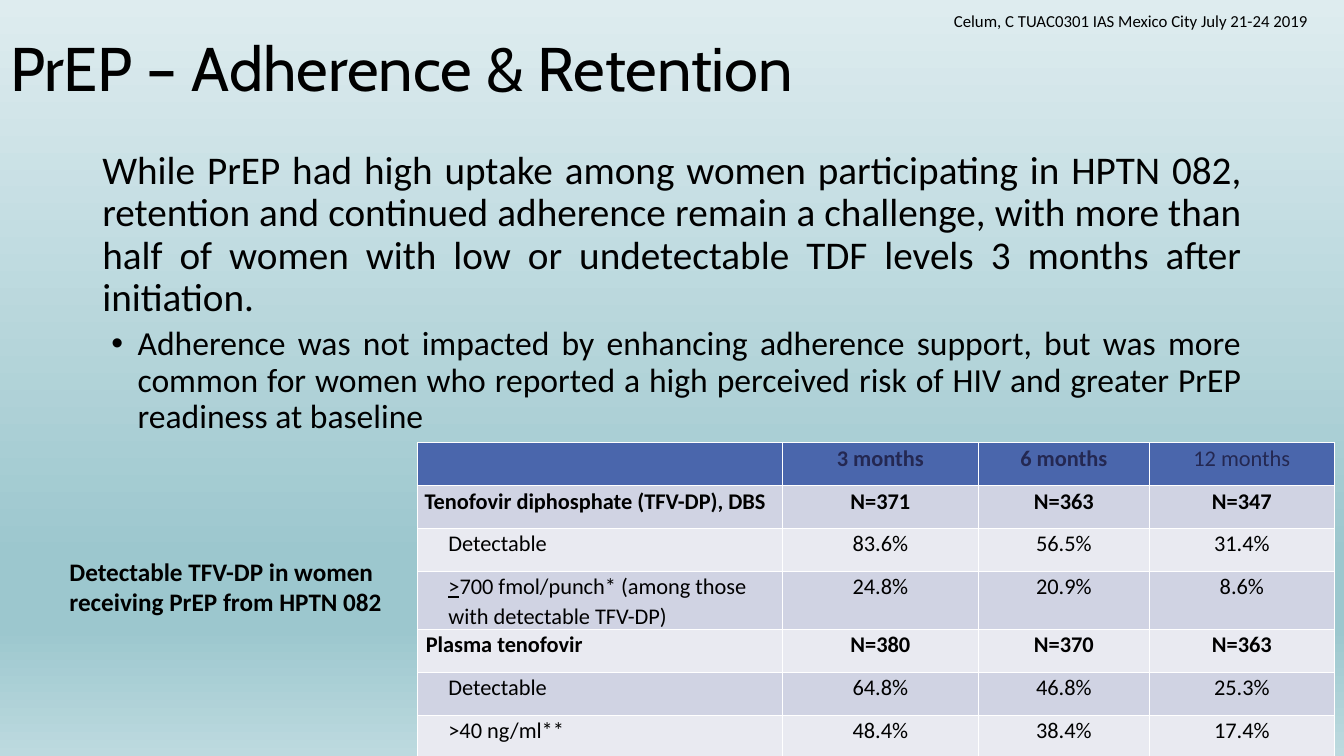
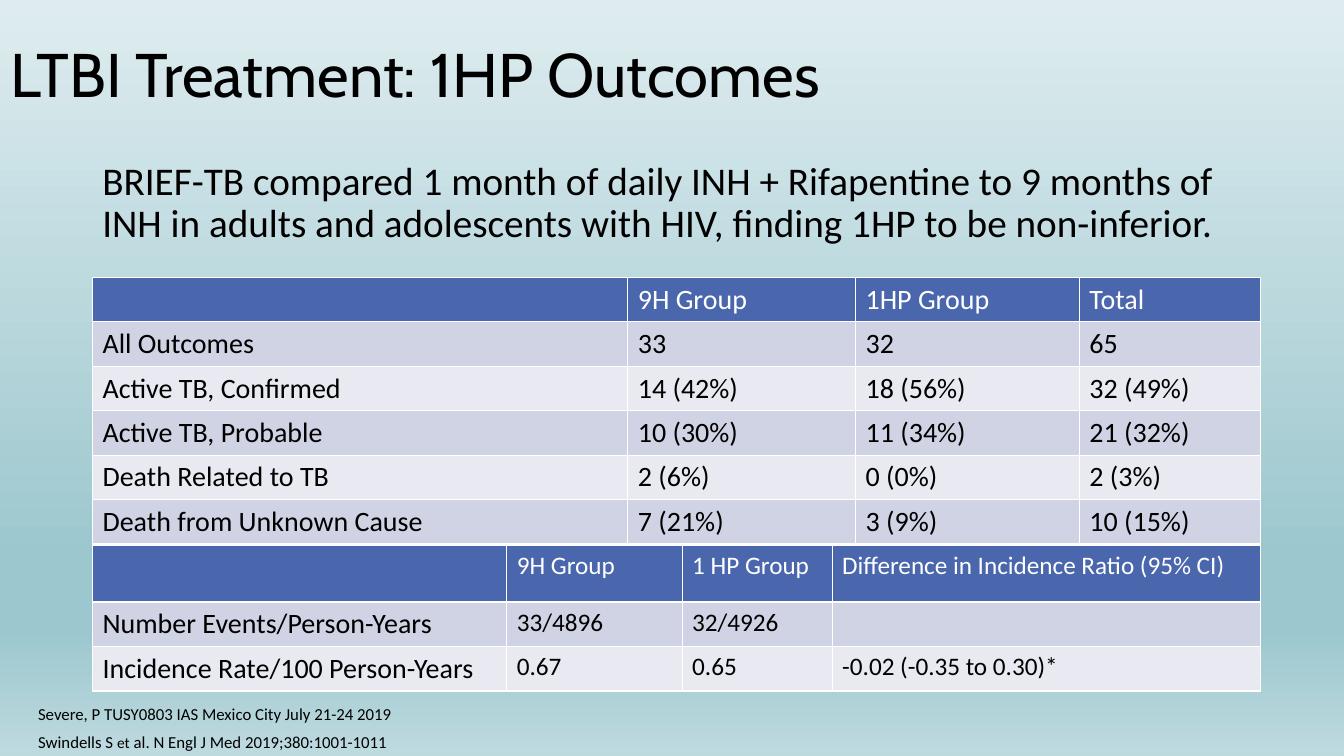
import lxml.etree
import pptx
import pptx.dml.color
import pptx.enum.text
import pptx.oxml
import pptx.oxml.ns
import pptx.util

Cm = pptx.util.Cm
Pt = pptx.util.Pt
qn = pptx.oxml.ns.qn
ALIGN = pptx.enum.text.PP_ALIGN
ANCHOR = pptx.enum.text.MSO_ANCHOR

HUES = {
    "black": "000000",
    "white": "FFFFFF",
    "navy": "242852",
    "pale": "ACCBF9",
    "head": "4A66AC",
    "dark": "D0D3E3",
    "light": "E9EAF1",
}
SKY = [(0, "DEECEF"), (74, "9CC7CE"), (83, "9CC7CE"), (100, "BDDADF")]

DOSES = [
    ["", "3 months", "6 months", "12 months"],
    ["Tenofovir diphosphate (TFV-DP), DBS", "N=371", "N=363", "N=347"],
    ["Detectable", "83.6%", "56.5%", "31.4%"],
    [(">", "700 fmol/punch* (among those with detectable TFV-DP)"), "24.8%", "20.9%", "8.6%"],
    ["Plasma tenofovir", "N=380", "N=370", "N=363"],
    ["Detectable", "64.8%", "46.8%", "25.3%"],
    [">40 ng/ml**", "48.4%", "38.4%", "17.4%"],
]
CASES = [
    ["", "9H Group", "1HP Group", "Total"],
    ["All Outcomes", "33", "32", "65"],
    ["Active TB, Confirmed", "14 (42%)", "18 (56%)", "32 (49%)"],
    ["Active TB, Probable", "10 (30%)", "11 (34%)", "21 (32%)"],
    ["Death Related to TB", "2 (6%)", "0 (0%)", "2 (3%)"],
    ["Death from Unknown Cause", "7 (21%)", "3 (9%)", "10 (15%)"],
]
RATES = [
    ["", "9H Group", "1 HP Group", "Difference in Incidence Ratio (95% CI)"],
    ["Number Events/Person-Years", "33/4896", "32/4926", ""],
    ["Incidence Rate/100 Person-Years", "0.67", "0.65", "-0.02 (-0.35 to 0.30)*"],
]


def rgb(hue):
    return pptx.dml.color.RGBColor.from_string(HUES[hue])


def put(par, text, size, hue="black", bold=False, face="Calibri"):
    parts = (text,) if isinstance(text, str) else text
    par.text = parts[0]
    for part in parts[1:]:
        par.add_run().text = part
    for run in par.runs:
        run.font.name = face
        run.font.size = Pt(size)
        run.font.bold = bold
        run.font.color.rgb = rgb(hue)
    return par


def indent(par, left, first=0):
    props = par._p.get_or_add_pPr()
    props.set("marL", str(Cm(left)))
    props.set("indent", str(Cm(first)))


def bullet(par):
    indent(par, 0.89, -0.66)
    props = par._p.get_or_add_pPr()
    lxml.etree.SubElement(props, qn("a:buFont")).set("typeface", "Arial")
    lxml.etree.SubElement(props, qn("a:buChar")).set("char", "•")


def paint(master):
    fill = master.background.fill
    fill.gradient()
    fill.gradient_angle = 270
    stops = master.element.find(".//" + qn("a:gsLst"))
    for stop in list(stops):
        stops.remove(stop)
    for pos, color in SKY:
        stop = lxml.etree.SubElement(stops, qn("a:gs"), pos=str(pos * 1000))
        lxml.etree.SubElement(stop, qn("a:srgbClr"), val=color)


def start(deck, text, top):
    slide = deck.slides.add_slide(deck.slide_layouts[5])
    title = slide.shapes.title
    title.left, title.top = Cm(0), Cm(top)
    title.width, title.height = Cm(29.21), Cm(3.68)
    title.text_frame.vertical_anchor = ANCHOR.MIDDLE
    par = put(title.text_frame.paragraphs[0], text, 44, face="Cabin")
    par.alignment = ALIGN.LEFT
    par.line_spacing = 0.9
    return slide


def frame(slide, left, top, width, height):
    box = slide.shapes.add_textbox(Cm(left), Cm(top), Cm(width), Cm(height))
    box.text_frame.word_wrap = True
    return box.text_frame


def note(slide, left, top, width, text, size=12, bold=False):
    return put(frame(slide, left, top, width, 0.76).paragraphs[0], text, size, bold=bold)


def body(slide, top, lead, point="", align=ALIGN.LEFT):
    area = frame(slide, 2.33, top, 29.21, 12.09)
    pars = [put(area.paragraphs[0], lead, 28)]
    if point:
        par = area.add_paragraph()
        bullet(par)
        par.space_before = Pt(5)
        pars.append(put(par, point, 24))
    for par in pars:
        par.alignment = align
        par.line_spacing = 0.9


def edge(cell):
    props = cell._tc.get_or_add_tcPr()
    for spot, side in enumerate("LRTB"):
        line = lxml.etree.Element(qn("a:ln" + side), w=str(Pt(1)))
        fill = lxml.etree.SubElement(line, qn("a:solidFill"))
        lxml.etree.SubElement(fill, qn("a:srgbClr"), val=HUES["white"])
        props.insert(spot, line)


def grid(slide, left, top, cols, highs, rows, style, hue="white"):
    shape = slide.shapes.add_table(
        len(rows), len(cols), Cm(left), Cm(top), Cm(sum(cols)), Cm(sum(highs)))
    table = shape.table
    for col, width in zip(table.columns, cols):
        col.width = Cm(width)
    for r, row in enumerate(rows):
        table.rows[r].height = Cm(highs[r])
        for c, text in enumerate(row):
            cell = table.cell(r, c)
            cell.fill.solid()
            cell.fill.fore_color.rgb = rgb("head" if r == 0 else "dark" if r % 2 else "light")
            edge(cell)
            style(cell, r, c, text, "black" if r else hue)


def dose(cell, r, c, text, hue):
    cell.margin_left = cell.margin_right = Cm(0.18)
    cell.margin_top = cell.margin_bottom = 0
    group = r in (1, 4)
    bold = group or (r == 0 and c < 3)
    par = put(cell.text_frame.paragraphs[0], text, 16, hue, bold)
    par.line_spacing = 1.07
    if c:
        par.alignment = ALIGN.CENTER
    elif r == 4:
        indent(par, 0.58, -0.55)
    elif r and not group:
        indent(par, 0.6)
    if not isinstance(text, str):
        par.runs[0].font.underline = True


def case(cell, r, c, text, hue):
    put(cell.text_frame.paragraphs[0], text, 20, hue)


def rate(cell, r, c, text, hue):
    put(cell.text_frame.paragraphs[0], text, 18 if c else 20, hue)


def prep(deck):
    slide = start(deck, "PrEP – Adherence & Retention", -0.04)
    body(slide, 3.67,
         "While PrEP had high uptake among women participating in HPTN 082, retention and "
         "continued adherence remain a challenge, with more than half of women with low or "
         "undetectable TDF levels 3 months after initiation.",
         "Adherence was not impacted by enhancing adherence support, but was more common for "
         "women who reported a high perceived risk of HIV and greater PrEP readiness at baseline",
         ALIGN.JUSTIFY)
    highs = [1.08] * len(DOSES)
    highs[3] = 1.46
    for count, hue in ((len(DOSES), "pale"), (4, "navy")):
        grid(slide, 10.52, 11.16, [9.19, 4.95, 4.3, 4.67], highs[:count], DOSES[:count], dose, hue)
    note(slide, 23.79, 0.14, 9.7, "Celum, C TUAC0301 IAS Mexico City July 21-24 2019")
    note(slide, 1.5, 13.89, 9.02, "Detectable TFV-DP in women receiving PrEP from HPTN 082", 18, True)


def ltbi(deck):
    slide = start(deck, "LTBI Treatment: 1HP Outcomes", 0.11)
    body(slide, 3.94,
         "BRIEF-TB compared 1 month of daily INH + Rifapentine to 9 months of INH in adults "
         "and adolescents with HIV, finding 1HP to be non-inferior.")
    grid(slide, 2.33, 6.99, [13.49, 5.74, 5.64, 4.57], [1.12] * len(CASES), CASES, case)
    grid(slide, 2.33, 13.74, [10.44, 4.42, 3.78, 10.8], [1.43, 1.12, 1.12], RATES, rate)
    note(slide, 0.71, 18.31, 13.64,
         ("Swindells S ", "et", " al. N Engl J Med 2019;380:1001-1011")).runs[1].font.size = Pt(11)
    note(slide, 0.71, 17.6, 9.68, "Severe, P TUSY0803 IAS Mexico City July 21-24 2019")


def main():
    deck = pptx.Presentation()
    deck.slide_width, deck.slide_height = Cm(33.87), Cm(19.05)
    paint(deck.slide_master)
    prep(deck)
    ltbi(deck)
    deck.save("out.pptx")


if __name__ == "__main__":
    main()
